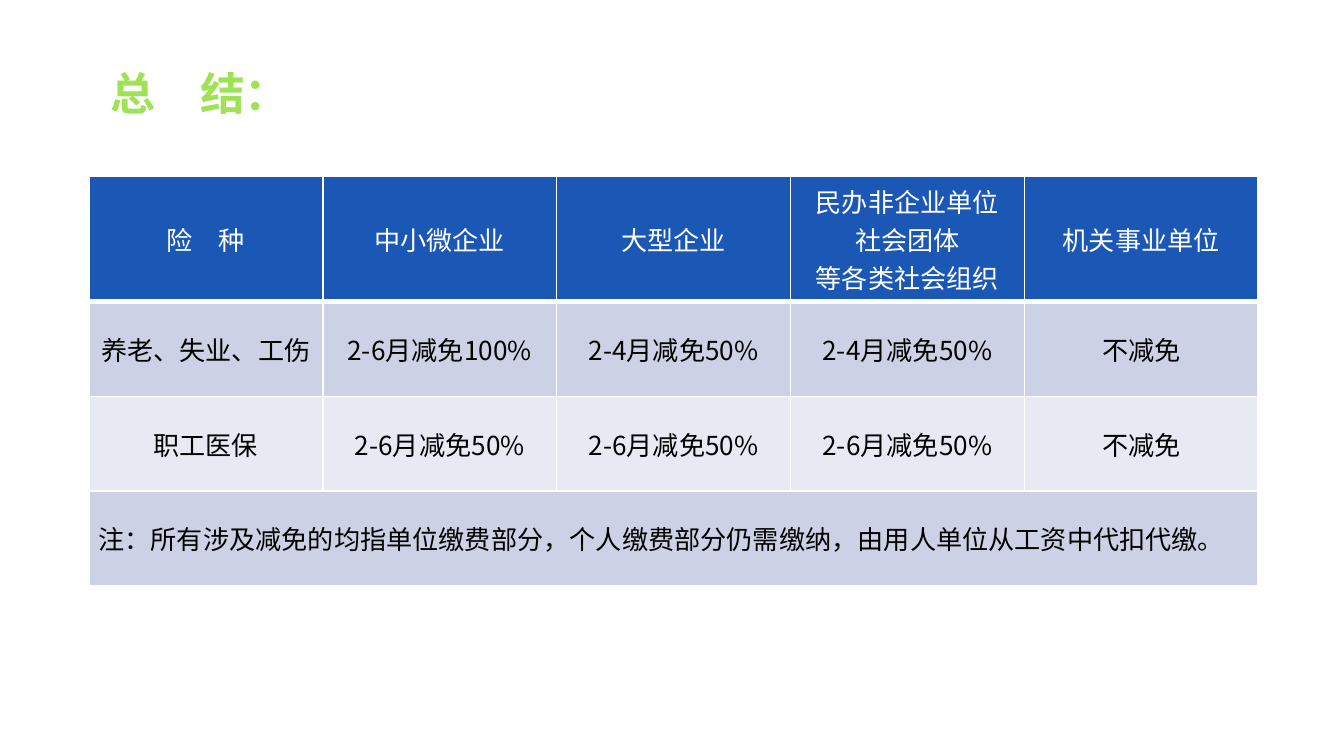
import pptx
import pptx.util
import pptx.dml.color
import pptx.enum.text
import pptx.oxml.ns
from dataclasses import dataclass
from lxml import etree

Cm, Pt = pptx.util.Cm, pptx.util.Pt
qn = pptx.oxml.ns.qn
ALIGN = pptx.enum.text.PP_ALIGN
ANCHOR = pptx.enum.text.MSO_ANCHOR


@dataclass(frozen=True)
class Theme:
    title: str = "9EE256"
    header: str = "1B57B5"
    band_dark: str = "CDD1E5"
    band_light: str = "E8EAF3"
    white: str = "FFFFFF"
    black: str = "000000"
    title_size: int = 24
    table_size: int = 14
    title_font: str = "Arial"
    font: str = "Noto Sans CJK SC"


MARGINS = {
    "margin_left": Cm(0.18), "margin_right": Cm(0.18),
    "margin_top": Cm(0.1), "margin_bottom": Cm(0.1),
}


def assign(target, values):
    for name, value in values.items():
        setattr(target, name, value)


class Builder:
    def __init__(self, theme, page):
        self.theme = theme
        self.page = page

    def add_text(self, frame, text, align, size, font, color, bold=False):
        """Fill a text frame, one paragraph per line of text."""
        for number, line in enumerate(text.split("\n")):
            para = frame.paragraphs[0] if number == 0 else frame.add_paragraph()
            para.alignment = align
            span = para.add_run()
            span.text = line
            assign(span.font, {"size": Pt(size), "name": font, "bold": bold})
            span.font.color.rgb = pptx.dml.color.RGBColor.from_string(color)
            east_asian = etree.SubElement(span.font._element, qn("a:ea"))
            east_asian.set("typeface", self.theme.font)

    def title(self, text, left, top, width, height):
        theme = self.theme
        box = self.page.shapes.add_textbox(left, top, width, height)
        assign(box.text_frame, {
            "word_wrap": True,
            "auto_size": pptx.enum.text.MSO_AUTO_SIZE.SHAPE_TO_FIT_TEXT,
            **MARGINS,
        })
        self.add_text(box.text_frame, text, ALIGN.LEFT, theme.title_size,
                      theme.title_font, theme.title, bold=True)

    def borders(self, cell, bottom):
        props = cell._tc.get_or_add_tcPr()
        for side, width in (("L", 1), ("R", 1), ("T", 1), ("B", bottom)):
            line = etree.SubElement(props, qn("a:ln" + side), w=str(int(Pt(width))))
            fill = etree.SubElement(line, qn("a:solidFill"))
            etree.SubElement(fill, qn("a:srgbClr"), val=self.theme.white)

    def cell(self, cell, text, fill, color, align, bottom):
        self.borders(cell, bottom)
        assign(cell, {"vertical_anchor": ANCHOR.MIDDLE, **MARGINS})
        cell.fill.solid()
        cell.fill.fore_color.rgb = pptx.dml.color.RGBColor.from_string(fill)
        if text:
            self.add_text(cell.text_frame, text, align, self.theme.table_size,
                          self.theme.font, color)

    def table(self, rows, note, left, top, column_width, heights):
        """Header row, banded body rows and a full-width note row."""
        theme = self.theme
        count = len(rows[0])
        grid = self.page.shapes.add_table(
            len(heights), count, left, top, column_width * count, sum(heights)).table
        assign(grid, {"first_row": False, "horz_banding": False})
        for column in grid.columns:
            column.width = column_width
        for row, height in zip(grid.rows, heights):
            row.height = height

        last = len(rows)
        grid.cell(last, 0).merge(grid.cell(last, count - 1))
        for r, texts in enumerate(rows + [[note] + [""] * (count - 1)]):
            header = r == 0
            band = theme.band_dark if r % 2 else theme.band_light
            for c, text in enumerate(texts):
                self.cell(grid.cell(r, c), text,
                          fill=theme.header if header else band,
                          color=theme.white if header else theme.black,
                          align=ALIGN.LEFT if r == last else ALIGN.CENTER,
                          bottom=3 if header else 1)


def main():
    deck = pptx.Presentation()
    assign(deck, {"slide_width": Cm(25.4), "slide_height": Cm(14.29)})
    builder = Builder(Theme(), deck.slides.add_slide(deck.slide_layouts[6]))

    # Relief by insurance type and employer
    rows = [
        ["险　种", "中小微企业", "大型企业",
         "民办非企业单位\n社会团体\n等各类社会组织", "机关事业单位"],
        ["养老、失业、工伤", "2-6月减免100%", "2-4月减免50%", "2-4月减免50%", "不减免"],
        ["职工医保"] + ["2-6月减免50%"] * 3 + ["不减免"],
    ]
    note = "注：所有涉及减免的均指单位缴费部分，个人缴费部分仍需缴纳，由用人单位从工资中代扣代缴。"
    builder.table(rows, note, Cm(1.68), Cm(3.34), Cm(4.42),
                  [Cm(1.91)] + [Cm(1.79)] * 3)

    # Heading
    builder.title("总　结：", Cm(1.91), Cm(1.14), Cm(3.25), Cm(1.22))

    deck.save("out.pptx")


if __name__ == "__main__":
    main()
